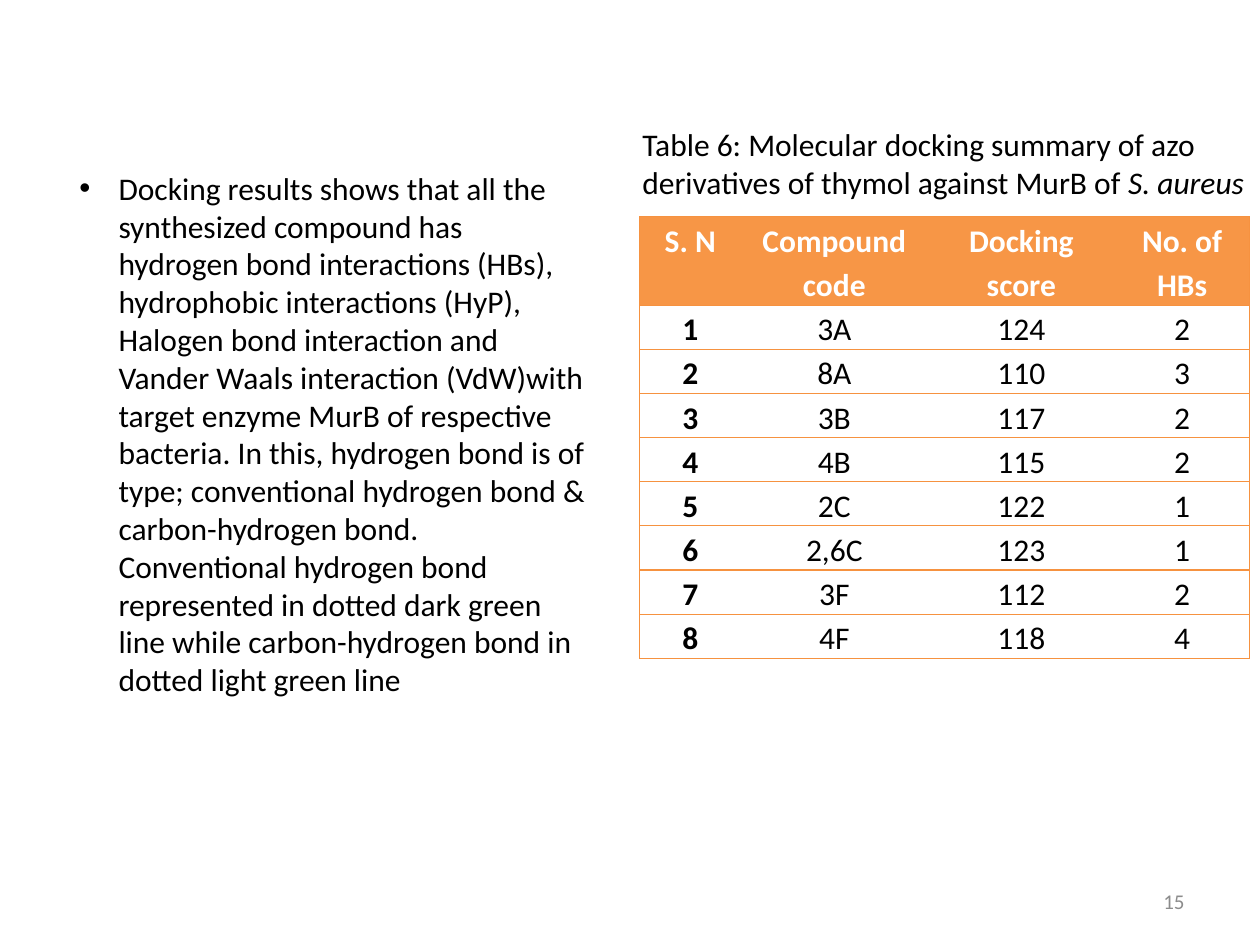
from typing import NamedTuple

import pptx
import pptx.dml.color
import pptx.enum.text
import pptx.oxml
import pptx.oxml.ns
import pptx.util

Cm = pptx.util.Cm
Pt = pptx.util.Pt
ALIGN = pptx.enum.text.PP_ALIGN

FONT = "Calibri"
COLORS = {
    "text": "000000",
    "page_number": "8C8C8C",
    "header_text": "FFFFFF",
    "header_fill": "F79646",
    "border": "F69240",
}


class Run(NamedTuple):
    text: str
    color: str = "text"
    size: int = 18
    bold: bool = False
    italic: bool = False


class Block(NamedTuple):
    """A text box: left, top, width and height in centimetres."""
    left: float
    top: float
    width: float
    height: float
    runs: list[Run]
    align: ALIGN = ALIGN.LEFT
    anchor: pptx.enum.text.MSO_ANCHOR = pptx.enum.text.MSO_ANCHOR.TOP
    bullet: bool = False


FINDINGS = Block(1.35, 3.28, 10.72, 11.02, [Run(
    "Docking results shows that all the synthesized compound has hydrogen bond "
    "interactions (HBs), hydrophobic interactions (HyP), Halogen bond interaction "
    "and Vander Waals interaction (VdW)with target enzyme MurB of respective "
    "bacteria. In this, hydrogen bond is of type; conventional hydrogen bond & "
    "carbon-hydrogen bond. Conventional hydrogen bond represented in dotted dark "
    "green line while carbon-hydrogen bond in dotted light green line")], bullet=True)
CAPTION = Block(12.7, 2.39, 12.7, 1.8, [
    Run("Table 6: Molecular docking summary of azo derivatives of thymol against MurB of "),
    Run("S. aureus", italic=True)])
PAGE_NUMBER = Block(18.21, 17.65, 5.92, 1.02, [Run("15", "page_number", 12)],
                    ALIGN.RIGHT, pptx.enum.text.MSO_ANCHOR.MIDDLE)

HEADERS = ("S. N", "Compound code", "Docking score", "No. of HBs")
COLUMN_WIDTHS = (2.03, 3.78, 3.76, 2.72)
HEADER_HEIGHT, ROW_HEIGHT = 1.78, 0.89
DOCKING = [("3A", 124, 2), ("8A", 110, 3), ("3B", 117, 2), ("4B", 115, 2),
           ("2C", 122, 1), ("2,6C", 123, 1), ("3F", 112, 2), ("4F", 118, 4)]


def rgb(name: str) -> pptx.dml.color.RGBColor:
    return pptx.dml.color.RGBColor.from_string(COLORS[name])


def add_run(paragraph, run: Run) -> None:
    part = paragraph.add_run()
    part.text = run.text
    font = part.font
    font.name, font.size = FONT, Pt(run.size)
    font.bold, font.italic = run.bold, run.italic
    font.color.rgb = rgb(run.color)


def set_bullet(paragraph) -> None:
    properties = paragraph._p.get_or_add_pPr()
    properties.set("marL", str(Cm(0.79)))
    properties.set("indent", str(-Cm(0.79)))
    for tag, key, value in (("a:buFont", "typeface", "Arial"), ("a:buChar", "char", "•")):
        element = pptx.oxml.parse_xml(f"<{tag} {pptx.oxml.ns.nsdecls('a')}/>")
        element.set(key, value)
        properties.append(element)


def add_block(slide, block: Block) -> None:
    box = slide.shapes.add_textbox(
        Cm(block.left), Cm(block.top), Cm(block.width), Cm(block.height))
    frame = box.text_frame
    frame.word_wrap = True
    frame.vertical_anchor = block.anchor
    paragraph = frame.paragraphs[0]
    paragraph.alignment = block.align
    if block.bullet:
        set_bullet(paragraph)
    for run in block.runs:
        add_run(paragraph, run)


def set_borders(cell, sides: str) -> None:
    """Draw the given sides (letters of LRTB) and clear the others."""
    properties = cell._tc.get_or_add_tcPr()
    for side in "LRTB":
        if side in sides:
            fill = f'<a:solidFill><a:srgbClr val="{COLORS["border"]}"/></a:solidFill>'
        else:
            fill = "<a:noFill/>"
        properties.append(pptx.oxml.parse_xml(
            f'<a:ln{side} {pptx.oxml.ns.nsdecls("a")} w="{Pt(0.75)}">{fill}</a:ln{side}>'))


def fill_cell(cell, text: str, is_header: bool, is_first: bool, is_last: bool) -> None:
    set_borders(cell, "TB" + "L" * is_first + "R" * is_last)
    if is_header:
        cell.fill.solid()
        cell.fill.fore_color.rgb = rgb("header_fill")
    else:
        cell.fill.background()
    cell.margin_left = cell.margin_right = Cm(0.18)
    cell.margin_top = cell.margin_bottom = 0
    paragraph = cell.text_frame.paragraphs[0]
    paragraph.alignment = ALIGN.CENTER
    paragraph.line_spacing = 1.15
    add_run(paragraph, Run(text, "header_text" if is_header else "text",
                           bold=is_header or is_first))


def add_docking_table(slide) -> None:
    rows = [HEADERS] + [(number, *result) for number, result in enumerate(DOCKING, 1)]
    heights = [HEADER_HEIGHT] + [ROW_HEIGHT] * len(DOCKING)
    table = slide.shapes.add_table(
        len(rows), len(HEADERS), Cm(12.9), Cm(4.37),
        Cm(sum(COLUMN_WIDTHS)), Cm(sum(heights))).table
    table.horz_banding = False
    for column, width in zip(table.columns, COLUMN_WIDTHS):
        column.width = Cm(width)
    for r, (values, height) in enumerate(zip(rows, heights)):
        table.rows[r].height = Cm(height)
        for c, value in enumerate(values):
            fill_cell(table.cell(r, c), str(value), r == 0, c == 0, c == len(HEADERS) - 1)


def main() -> None:
    presentation = pptx.Presentation()
    presentation.slide_width, presentation.slide_height = Cm(25.4), Cm(19.05)
    slide = presentation.slides.add_slide(presentation.slide_layouts[6])
    add_block(slide, PAGE_NUMBER)
    add_docking_table(slide)
    add_block(slide, FINDINGS)
    add_block(slide, CAPTION)
    presentation.save("out.pptx")


if __name__ == "__main__":
    main()
